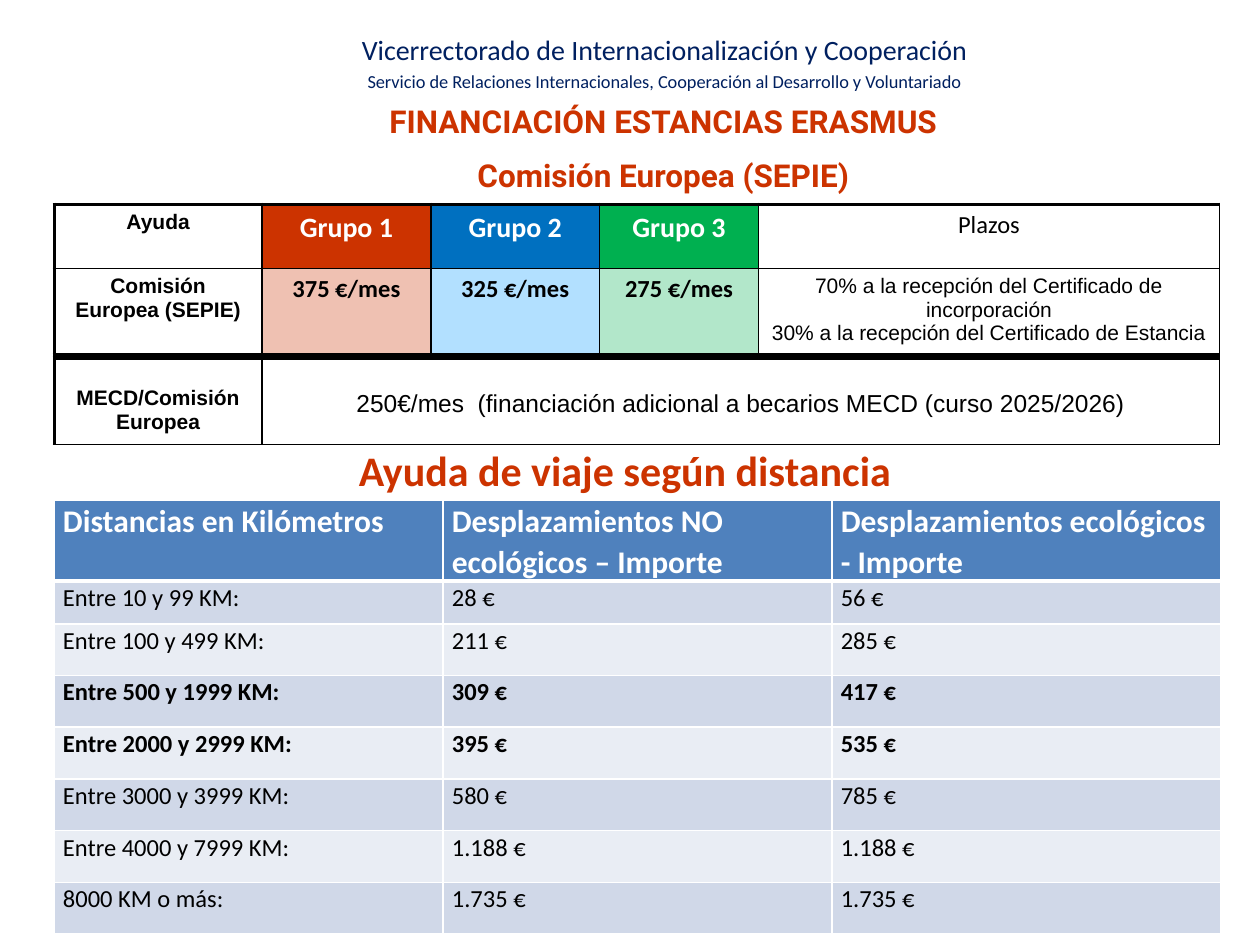
"""Build the slide on Erasmus funding: monthly grants and travel aid by distance."""
from collections import namedtuple

from lxml import etree
from pptx import Presentation
from pptx import util as u
from pptx.dml.color import RGBColor
from pptx.enum import text
from pptx.oxml.ns import qn

Style = namedtuple("Style", "face size color bold")
THEME = {
    "office": Style("Calibri", 16, "002060", False),
    "service": Style("Calibri", 10.5, "002060", False),
    "title": Style("Roboto", 18, "CC3300", True),
    "travel": Style("Calibri", 24, "CC3300", True),
    "label": Style("Arial", 12, "000000", True),
    "group": Style("Calibri", 16, "FFFFFF", True),
    "amount": Style("Calibri", 14, "000000", True),
    "plain": Style("Calibri", 14, "000000", False),
    "terms": Style("Arial", 12, "000000", False),
    "extra": Style("Arial", 14, "000000", False),
    "heading": Style("Calibri", 18, "FFFFFF", True),
    "white": "FFFFFF", "black": "000000",
    "red": "CC3300", "blue": "0070C0", "sky": "0099FF", "green": "00B050",
    "header": "4F81BD", "bands": ("E9EDF4", "D0D8E8"),
}
LEFT, CENTER = text.PP_ALIGN.LEFT, text.PP_ALIGN.CENTER


def write(frame, lines, align=CENTER, gap=0, spacing=None):
    """Fill a text frame with (words, style name) lines; gap is a share of the type size."""
    frame.word_wrap = True
    for index, (words, style_name) in enumerate(lines):
        style = THEME[style_name]
        line = frame.paragraphs[0] if index == 0 else frame.add_paragraph()
        line.text, line.alignment, line.line_spacing = words, align, spacing
        if index and gap:
            line.space_before = u.Pt(gap * style.size)
        line.font.name, line.font.size = style.face, u.Pt(style.size)
        line.font.bold = style.bold
        line.font.color.rgb = RGBColor.from_string(style.color)


def paint(cell, fill, edge_color, edges, opacity=100):
    """Fill a cell and rule its left, right, top and bottom edges in points."""
    cell.fill.solid()
    cell.fill.fore_color.rgb = RGBColor.from_string(fill)
    properties = cell._tc.get_or_add_tcPr()
    if opacity < 100:
        tint = properties.find(".//" + qn("a:srgbClr"))
        etree.SubElement(tint, qn("a:alpha"), val=str(opacity * 1000))
    for index, (side, width) in enumerate(zip("LRTB", edges)):
        rule = etree.Element(qn(f"a:ln{side}"), w=str(u.Pt(width)))
        solid = etree.SubElement(rule, qn("a:solidFill"))
        etree.SubElement(solid, qn("a:srgbClr"), val=edge_color)
        properties.insert(index, rule)


deck = Presentation()
deck.slide_width, deck.slide_height = u.Inches(10), u.Inches(7.5)
slide = deck.slides.add_slide(deck.slide_layouts[6])
sides = (deck.slide_width, deck.slide_height) * 2

# boxes and grids below are percentages of the slide's sides
headings = [
    ((24, 2.8, 57.5, 9.47), 0.2, [
        ("Vicerrectorado de Internacionalización y Cooperación", "office"),
        ("Servicio de Relaciones Internacionales, Cooperación al Desarrollo y Voluntariado",
         "service")]),
    ((19.3, 10.13, 66.7, 11.47), 0.5, [
        ("FINANCIACIÓN ESTANCIAS ERASMUS", "title"),
        ("Comisión Europea (SEPIE)", "title")]),
    ((23.2, 46.4, 52.8, 6.67), 0, [("Ayuda de viaje según distancia", "travel")]),
]
for box, gap, lines in headings:
    place = [round(share * side / 100) for share, side in zip(box, sides)]
    write(slide.shapes.add_textbox(*place).text_frame, lines, gap=gap)

grids = [
    ((4.3, 21.6), (16.5, 13.4, 13.4, 12.6, 36.6), (6.8, 9.33)),
    ((4.3, 37.73), (16.5, 76), (9.33,)),
    ((4.3, 52.93), (30.87,) * 3, (8.4, 4.53) + (5.47,) * 6),
]
tables = []
for corner, columns, rows in grids:
    box = (*corner, sum(columns), sum(rows))
    place = [round(share * side / 100) for share, side in zip(box, sides)]
    table = slide.shapes.add_table(len(rows), len(columns), *place).table
    table.first_row = table.horz_banding = False
    for column, share in zip(table.columns, columns):
        column.width = round(share * deck.slide_width / 100)
    for row, share in zip(table.rows, rows):
        row.height = round(share * deck.slide_height / 100)
    tables.append(table)
grants, supplement, travel = tables

white, black = THEME["white"], THEME["black"]
grant_rows = [
    [([("Ayuda", "label")], white, 100),
     ([("Grupo 1", "group")], THEME["red"], 100),
     ([("Grupo 2", "group")], THEME["blue"], 100),
     ([("Grupo 3", "group")], THEME["green"], 100),
     ([("Plazos", "plain")], white, 100)],
    [([("Comisión Europea (SEPIE)", "label")], white, 100),
     ([("375 €/mes", "amount")], THEME["red"], 30),
     ([("325 €/mes", "amount")], THEME["sky"], 30),
     ([("275 €/mes", "amount")], THEME["green"], 30),
     ([("70% a la recepción del Certificado de incorporación", "terms"),
       ("30% a la recepción del Certificado de Estancia", "terms")], white, 100)],
]
for r, row in enumerate(grant_rows):
    for c, (lines, fill, opacity) in enumerate(row):
        cell = grants.cell(r, c)
        write(cell.text_frame, lines)
        paint(cell, fill, black, (1 if c else 2, 1, 1 if r else 2, 1), opacity)

supplement_row = [
    ("MECD/Comisión Europea", "label", 0.24, 2),
    ("250€/mes  (financiación adicional a becarios MECD (curso 2025/2026)", "extra", 0.27, 1),
]
for c, (words, style_name, top, left_edge) in enumerate(supplement_row):
    cell = supplement.cell(0, c)
    cell.margin_top = u.Inches(top)
    write(cell.text_frame, [(words, style_name)])
    paint(cell, white, black, (left_edge, 1, 4.5, 1))

travel_rows = [
    ("heading", "Distancias en Kilómetros", "Desplazamientos NO ecológicos – Importe",
     "Desplazamientos ecológicos - Importe"),
    ("plain", "Entre 10 y 99 KM:", "28 €", "56 €"),
    ("plain", "Entre 100 y 499 KM:", "211 €", "285 €"),
    ("amount", "Entre 500 y 1999 KM:", "309 €", "417 €"),
    ("amount", "Entre 2000 y 2999 KM:", "395 €", "535 €"),
    ("plain", "Entre 3000 y 3999 KM:", "580 €", "785 €"),
    ("plain", "Entre 4000 y 7999 KM:", "1.188 €", "1.188 €"),
    ("plain", "8000 KM o más:", "1.735 €", "1.735 €"),
]
for r, (style_name, *row) in enumerate(travel_rows):
    for c, words in enumerate(row):
        cell = travel.cell(r, c)
        cell.margin_left = cell.margin_right = u.Inches(0.07)
        cell.margin_top = cell.margin_bottom = 0
        write(cell.text_frame, [(words, style_name)], LEFT, spacing=1.07)
        fill = THEME["bands"][r % 2] if r else THEME["header"]
        paint(cell, fill, white, (1, 1, 3 if r == 1 else 1, 1 if r else 3))

deck.save("out.pptx")
